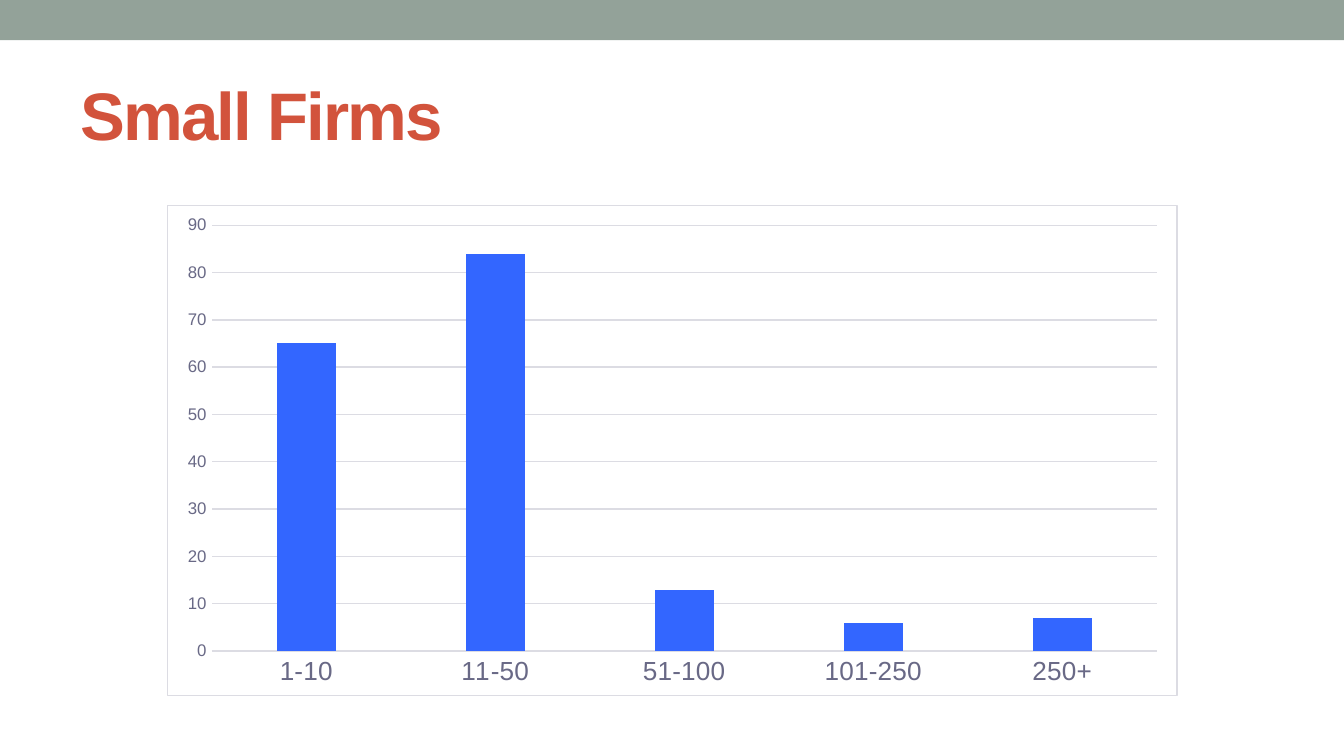
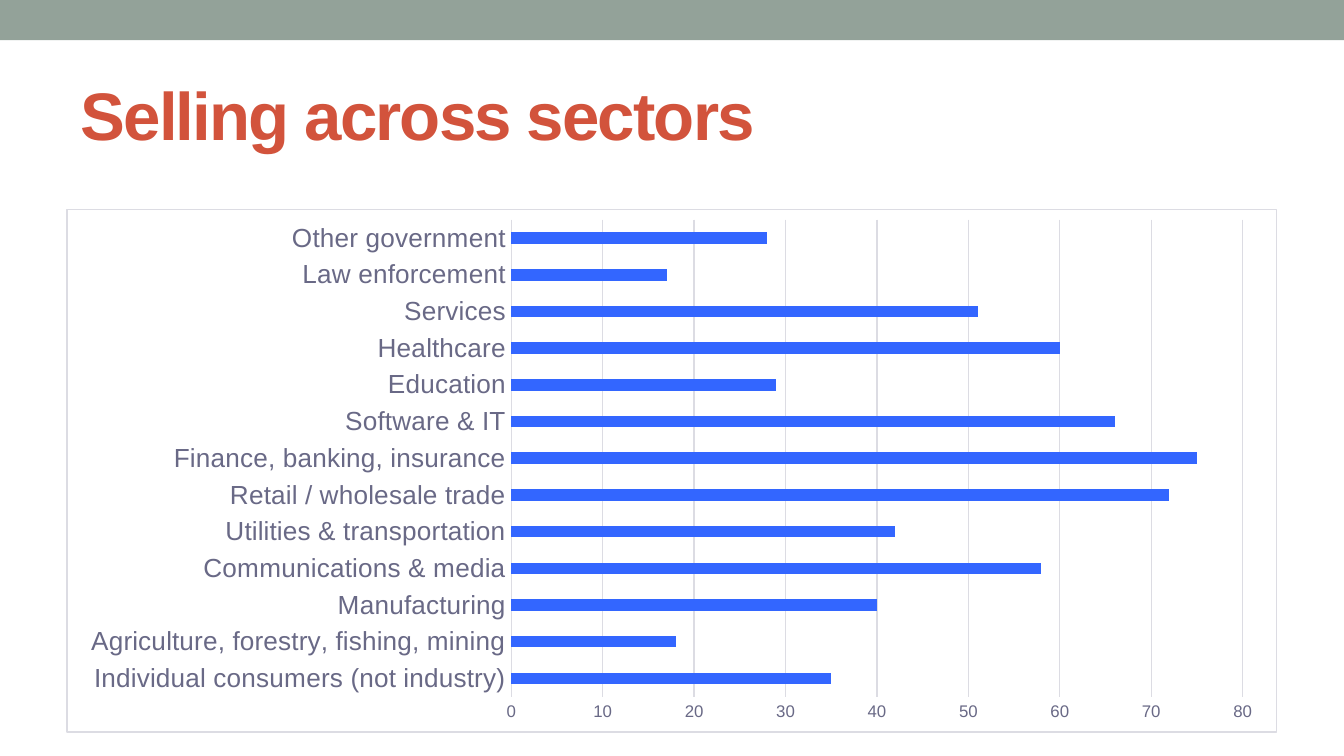
from lxml import etree
from pptx import Presentation
from pptx.chart import data as cd
from pptx.dml.color import RGBColor
from pptx.enum import chart as ch, shapes, text
from pptx.oxml import ns, parse_xml
from pptx.util import Pt

# Shared look
FONT = "Arial"
WHITE = RGBColor(0xFF, 0xFF, 0xFF)
SAGE = RGBColor(0x93, 0xA2, 0x99)
BRICK = RGBColor(0xD2, 0x53, 0x3C)
INK = RGBColor(0x29, 0x29, 0x34)
LABEL = RGBColor(0x69, 0x69, 0x86)
RULE = RGBColor(0xDC, 0xDC, 0xE3)
BLUE = RGBColor(0x33, 0x66, 0xFF)

SLIDE_W, SLIDE_H = 720, 405
BAND_BOX = (0, 0, SLIDE_W, 21.6)
TITLE_BOX = (36, 31.5, 648, 58.5)
TITLE_FONT = {"name": FONT, "size": Pt(36), "bold": True}

# Slide contents
FIRM_SIZES = {"1-10": 65, "11-50": 84, "51-100": 13, "101-250": 6, "250+": 7}
SECTORS = {
    "Individual consumers (not industry)": 35,
    "Agriculture, forestry, fishing, mining": 18,
    "Manufacturing": 40,
    "Communications & media": 58,
    "Utilities & transportation": 42,
    "Retail / wholesale trade": 72,
    "Finance, banking, insurance": 75,
    "Software & IT": 66,
    "Education": 29,
    "Healthcare": 60,
    "Services": 51,
    "Law enforcement": 17,
    "Other government": 28,
}
SLIDES = [
    {"title": "Small Firms", "values": FIRM_SIZES, "top": 90, "overlap": -27,
     "kind": ch.XL_CHART_TYPE.COLUMN_CLUSTERED, "box": (89.5, 109.8, 541.4, 263.2)},
    {"title": "Selling across sectors", "values": SECTORS, "top": 80, "overlap": 0,
     "kind": ch.XL_CHART_TYPE.BAR_CLUSTERED, "box": (35.5, 111.8, 648.6, 280.8)},
]


def set_attrs(obj, values):
    for name, value in values.items():
        setattr(obj, name, value)


def set_font(font, color, **values):
    set_attrs(font, values)
    font.color.rgb = color


def set_line(line):
    line.color.rgb = RULE
    line.width = Pt(0.75)


def add_band(s, box):
    sp = s.shapes.add_shape(shapes.MSO_SHAPE.RECTANGLE, *map(Pt, box))
    sp.shadow.inherit = False
    sp.fill.solid()
    sp.fill.fore_color.rgb = SAGE
    sp.line.fill.background()


def add_title(s, box, words):
    sp = s.shapes.title
    set_attrs(sp, dict(zip(("left", "top", "width", "height"), map(Pt, box))))
    tf = sp.text_frame
    set_attrs(tf, {"word_wrap": True, "auto_size": text.MSO_AUTO_SIZE.NONE,
                   "vertical_anchor": text.MSO_ANCHOR.MIDDLE})
    p = tf.paragraphs[0]
    p.alignment = text.PP_ALIGN.LEFT
    r = p.add_run()
    r.text = words
    set_font(r.font, BRICK, **TITLE_FONT)
    r.font._element.set("spc", "-100")  # letter spacing of -1 pt


def frame_chart(chart):
    """Give the chart area a white fill and a thin border."""
    frame = parse_xml(
        f'<c:spPr {ns.nsdecls("c", "a")}>'
        f'<a:solidFill><a:srgbClr val="{WHITE}"/></a:solidFill>'
        f'<a:ln w="{Pt(0.75)}"><a:solidFill><a:srgbClr val="{RULE}"/></a:solidFill></a:ln>'
        '</c:spPr>')
    chart._chartSpace.find(ns.qn("c:chart")).addnext(frame)


def add_bars(s, box, kind, values, top, overlap):
    data = cd.CategoryChartData()
    data.categories = list(values)
    data.add_series("Series 1", list(values.values()))
    chart = s.shapes.add_chart(kind, *map(Pt, box), data).chart
    set_attrs(chart, {"has_legend": False, "has_title": False})
    set_font(chart.font, INK, name=FONT, size=Pt(10))
    frame_chart(chart)

    # Bars
    plot = chart.plots[0]
    set_attrs(plot, {"gap_width": 219, "overlap": overlap, "vary_by_categories": False})
    fill = plot.series[0].format.fill
    fill.solid()
    fill.fore_color.rgb = BLUE

    # Axes
    for axis, size in ((chart.category_axis, 14), (chart.value_axis, 9)):
        set_attrs(axis, {"major_tick_mark": ch.XL_TICK_MARK.NONE,
                         "minor_tick_mark": ch.XL_TICK_MARK.NONE})
        set_font(axis.tick_labels.font, LABEL, name=FONT, size=Pt(size))
    set_line(chart.category_axis.format.line)
    axis = chart.value_axis
    set_attrs(axis, {"minimum_scale": 0, "maximum_scale": top, "major_unit": 10,
                     "has_major_gridlines": True})
    axis.format.line.fill.background()
    set_line(axis.major_gridlines.format.line)


def add_chart_slide(prs, title, box, **chart):
    s = prs.slides.add_slide(prs.slide_layouts[5])
    add_band(s, BAND_BOX)
    add_title(s, TITLE_BOX, title)
    add_bars(s, box, **chart)


def main():
    prs = Presentation()
    set_attrs(prs, {"slide_width": Pt(SLIDE_W), "slide_height": Pt(SLIDE_H)})
    for content in SLIDES:
        add_chart_slide(prs, **content)
    prs.save("out.pptx")


if __name__ == "__main__":
    main()
